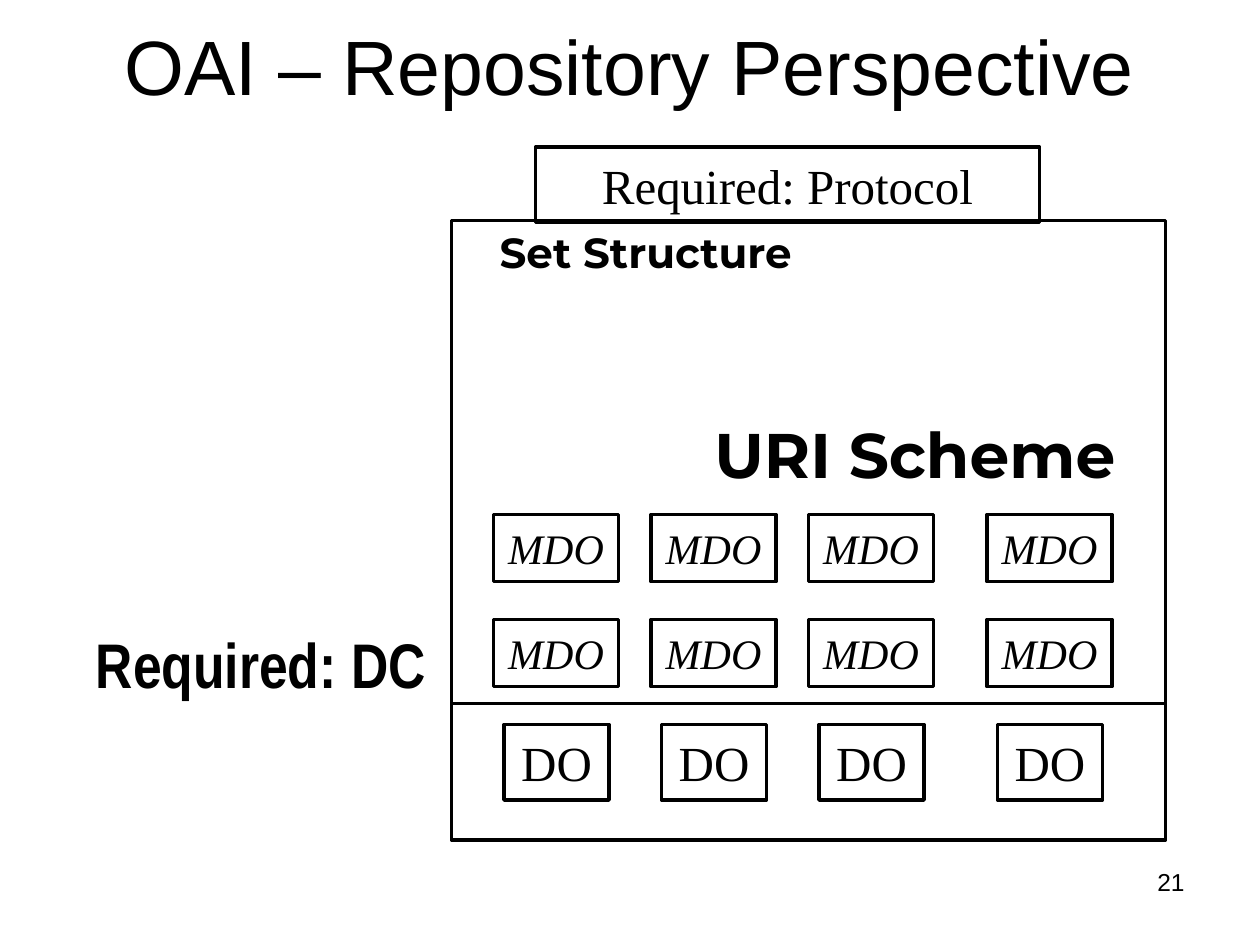
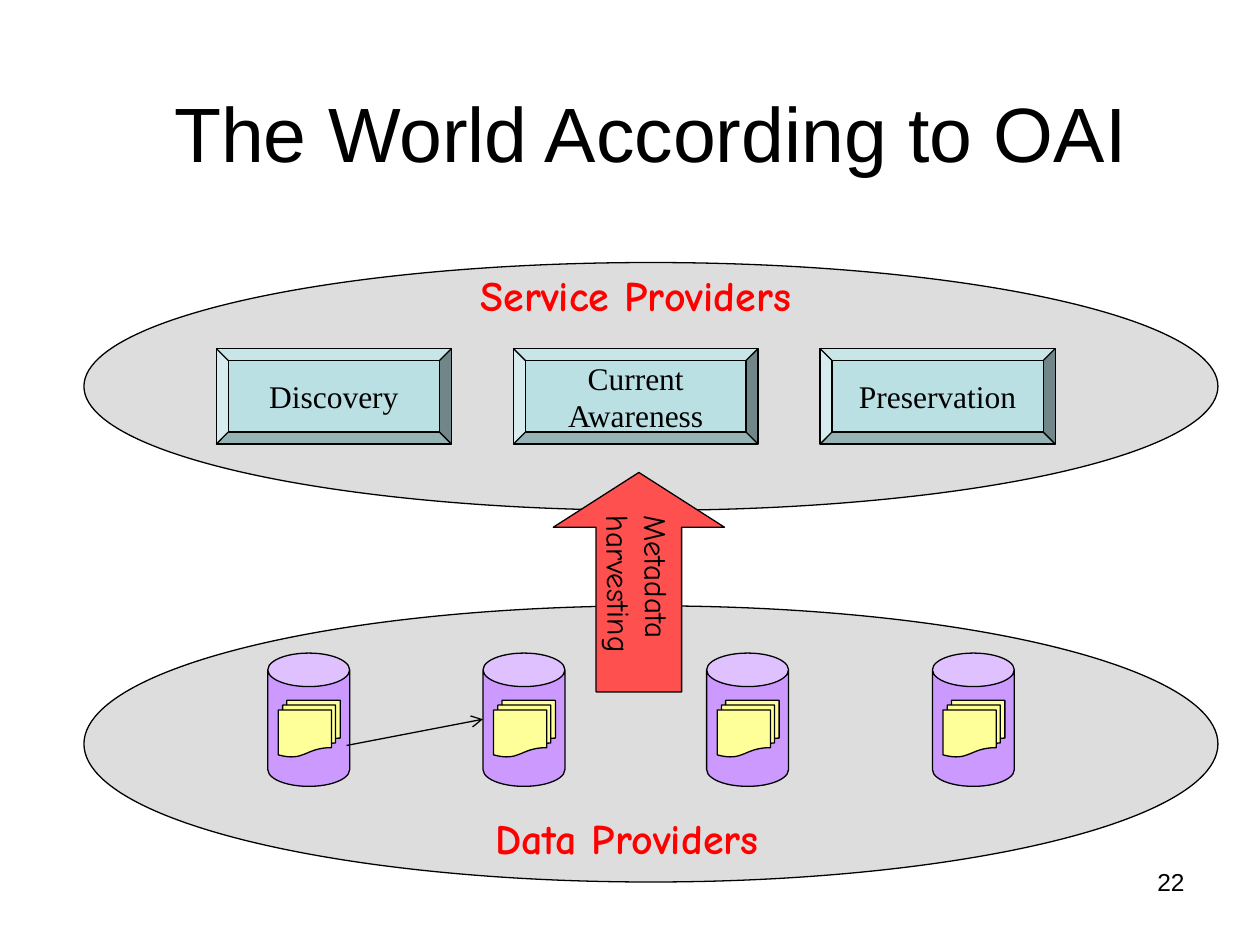
"""Builds two slides on OAI: the repository perspective and the provider world."""
from dataclasses import dataclass, replace
from typing import NamedTuple

from lxml import etree
from pptx import Presentation
from pptx import util as u
from pptx.dml.color import RGBColor
from pptx.enum import shapes as kinds, text as t
from pptx.oxml.ns import qn

WIDTH, HEIGHT = u.Inches(10), u.Inches(7.5)
COLUMN, ROW = WIDTH / 120, HEIGHT / 90
COLORS = {
    "ink": "000000",
    "provider": "DDDDDD",
    "store": "CC99FF",
    "records": "FFFF99",
    "service": "BBE0E3",
    "heading": "FF0000",
    "harvest": "FF5050",
}
SHAPE = kinds.MSO_SHAPE


class Area(NamedTuple):
    """A box in grid columns and rows."""
    col: float
    row: float
    cols: float
    rows: float

    def emu(self) -> tuple[int, int, int, int]:
        return (round(self.col * COLUMN), round(self.row * ROW),
                round(self.cols * COLUMN), round(self.rows * ROW))


@dataclass(frozen=True)
class Type:
    """How a piece of text is set."""
    font: str
    size: int
    color: str = "ink"
    bold: bool = False
    italic: bool = False
    align: t.PP_ALIGN = t.PP_ALIGN.CENTER
    anchor: t.MSO_ANCHOR = t.MSO_ANCHOR.TOP
    wrap: bool = False


@dataclass(frozen=True)
class Look:
    """The outline and fill of a preset shape."""
    kind: kinds.MSO_SHAPE
    fill: str | None = None
    weight: float = 0.75
    adjust: tuple[float, ...] = ()


TITLE = Type("Arial", 44, anchor=t.MSO_ANCHOR.MIDDLE, wrap=True)
PAGE_NUMBER = Type("Arial", 14, align=t.PP_ALIGN.RIGHT, wrap=True)
OBJECT = Type("Times New Roman", 28, anchor=t.MSO_ANCHOR.MIDDLE)
METADATA = replace(OBJECT, size=24, italic=True)
SERVICE = replace(OBJECT, size=18)
SET_NAME = Type("Montserrat", 24, bold=True)
URI_NAME = replace(SET_NAME, size=36)
REQUIREMENT = Type("Arial Narrow", 36, bold=True)
PROVIDER_NAME = Type("Comic Neue", 24, "heading", bold=True, align=t.PP_ALIGN.LEFT)
HARVEST_NAME = Type("Comic Neue", 18, align=t.PP_ALIGN.LEFT)

FRAME = Look(SHAPE.RECTANGLE, weight=2)
PROVIDER = Look(SHAPE.OVAL, "provider")
STORE = Look(SHAPE.CAN, "store", adjust=(0.41,))
RECORDS = Look(SHAPE.FLOWCHART_MULTIDOCUMENT, "records")
BEVEL = Look(SHAPE.BEVEL, "service")
HARVEST = Look(SHAPE.UP_ARROW, "harvest", adjust=(0.5, 0.32))


def color(name: str) -> RGBColor:
    return RGBColor.from_string(COLORS[name])


def write(shape, words: str, style: Type) -> None:
    frame = shape.text_frame
    frame.text = words
    frame.word_wrap = style.wrap
    frame.auto_size = t.MSO_AUTO_SIZE.NONE
    frame.vertical_anchor = style.anchor
    for paragraph in frame.paragraphs:
        paragraph.alignment = style.align
        font = paragraph.font
        font.name, font.size = style.font, u.Pt(style.size)
        font.bold, font.italic = style.bold, style.italic
        font.color.rgb = color(style.color)


def label(parent, area: Area, words: str, style: Type):
    box = parent.add_textbox(*area.emu())
    write(box, words, style)
    return box


def draw(parent, area: Area, look: Look, words: str = "", style: Type = OBJECT) -> None:
    shape = parent.add_shape(look.kind, *area.emu())
    shape.shadow.inherit = False
    for index, value in enumerate(look.adjust):
        shape.adjustments[index] = value
    if look.fill:
        shape.fill.solid()
        shape.fill.fore_color.rgb = color(look.fill)
    else:
        shape.fill.background()
    shape.line.color.rgb = color("ink")
    shape.line.width = u.Pt(look.weight)
    if words:
        write(shape, words, style)


def connect(parent, start: tuple[float, float], end: tuple[float, float],
            weight: float, arrow: bool = False) -> None:
    ends = [round(value * unit) for point in (start, end)
            for value, unit in zip(point, (COLUMN, ROW))]
    link = parent.add_connector(kinds.MSO_CONNECTOR.STRAIGHT, *ends)
    link.line.color.rgb = color("ink")
    link.line.width = u.Pt(weight)
    properties = link._element.spPr
    if arrow:
        etree.SubElement(properties.find(qn("a:ln")), qn("a:tailEnd"), type="arrow")
    etree.SubElement(properties, qn("a:effectLst"))


def start_slide(deck, number: int, title: str, title_area: Area):
    parent = deck.slides.add_slide(deck.slide_layouts[6]).shapes
    label(parent, Area(86, 82, 28, 6.2), str(number), PAGE_NUMBER)
    label(parent, title_area, title, TITLE)
    return parent


def repository_slide(deck) -> None:
    parent = start_slide(deck, 21, "OAI – Repository Perspective", Area(9, 2, 102, 8.3))
    draw(parent, Area(43, 21, 68, 59), FRAME)
    draw(parent, Area(51, 14, 48, 7.2), FRAME, "Required: Protocol")
    for col in (47, 62, 77, 94):
        for row in (49, 59):
            draw(parent, Area(col, row, 11.9, 6.4), FRAME, "MDO", METADATA)
        draw(parent, Area(col + 1, 69, 10, 7.2), FRAME, "DO")
    label(parent, Area(47, 21, 29, 25.3), "Set Structure", SET_NAME)
    label(parent, Area(67, 39, 40.3, 8.5), "URI Scheme", URI_NAME)
    connect(parent, (43, 67), (111, 67), FRAME.weight)
    label(parent, Area(9, 59, 31.7, 7.4), "Required: DC", REQUIREMENT)


def world_slide(deck) -> None:
    parent = start_slide(deck, 22, "The World According to OAI", Area(7, 5, 110, 15))
    draw(parent, Area(8, 57.7, 108, 26.3), PROVIDER)
    draw(parent, Area(8, 25, 108, 23.6), PROVIDER)
    for col in (25.5, 46, 67.3, 88.8):
        draw(parent, Area(col, 62.2, 7.8, 12.7), STORE)
        draw(parent, Area(col + 1, 66.7, 5.9, 5.4), RECORDS)
    for col, cols, words in ((20.6, 22.4, "Discovery"),
                             (48.9, 23.3, "Current\nAwareness"),
                             (78.1, 22.4, "Preservation")):
        draw(parent, Area(col, 33.2, cols, 9.1), BEVEL, words, SERVICE)
    label(parent, Area(44.6, 25.1, 36.5, 5.9), "Service Providers", PROVIDER_NAME)
    label(parent, Area(46, 76.8, 31.3, 6), "Data Providers", PROVIDER_NAME)
    harvesting = parent.add_group_shape().shapes
    draw(harvesting, Area(52.7, 45, 16.3, 20.9), HARVEST)
    label(harvesting, Area(52.3, 52.2, 17, 8.4), "Metadata\nharvesting",
          HARVEST_NAME).rotation = 89.3
    connect(parent, (33, 71), (46, 68.5), 0.75, arrow=True)


def main() -> None:
    deck = Presentation()
    deck.slide_width, deck.slide_height = WIDTH, HEIGHT
    repository_slide(deck)
    world_slide(deck)
    deck.save("out.pptx")


if __name__ == "__main__":
    main()
